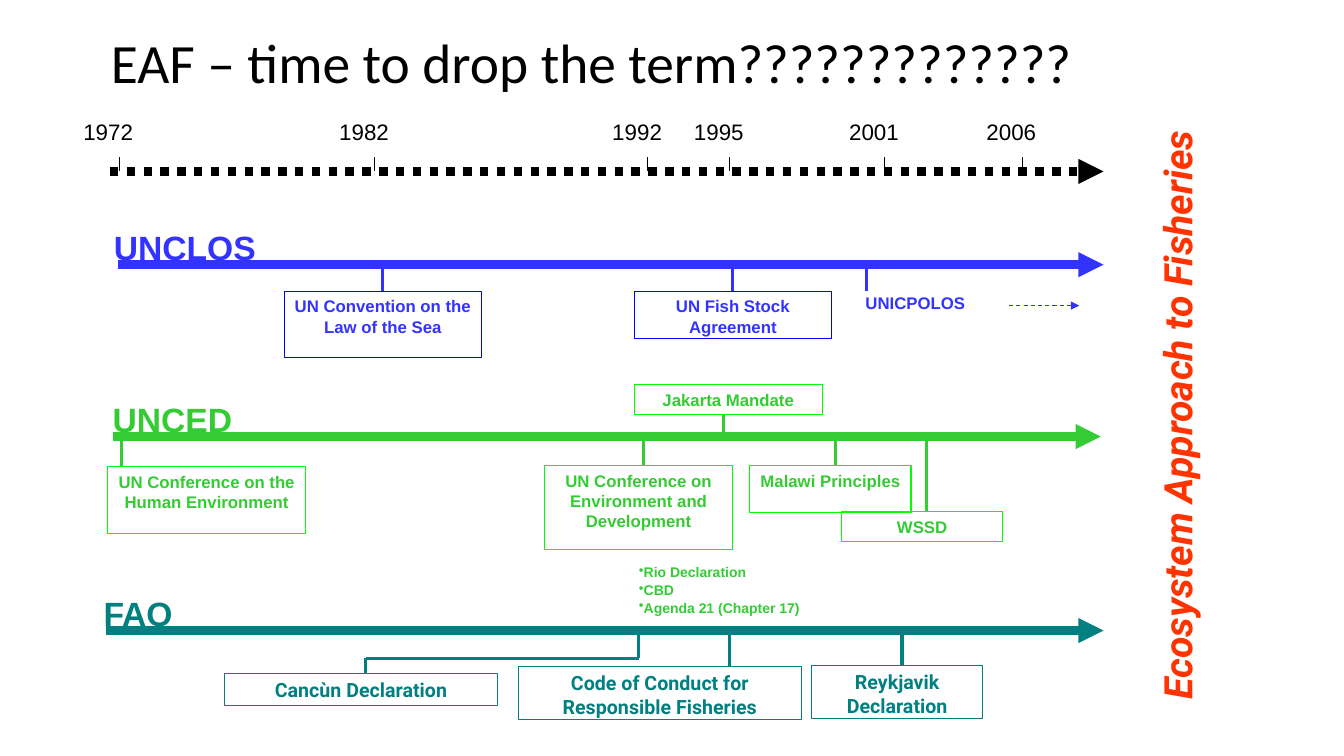
from itertools import pairwise

from lxml import etree
from pptx import Presentation
from pptx.dml.color import RGBColor
from pptx.enum import dml, shapes, text
from pptx.oxml import ns
from pptx.util import Cm, Pt

COLORS = {
    "black": "000000", "blue": "3333FF", "blue edge": "0000FF",
    "green": "33CC33", "green edge": "00FF00", "teal": "008080", "red": "FF3300",
}

# All lengths are in centimetres.
TITLE = "EAF – time to drop the term?????????????"
SIDE_LABEL = "Ecosystem Approach to Fisheries"
YEARS = [("1972", 3.0), ("1982", 9.45), ("1992", 16.33),
         ("1995", 18.39), ("2001", 22.3), ("2006", 25.76)]
YEAR_AXIS = {"left": 2.77, "right": 27.81, "y": 4.32}

# Each event: label, stem x (None for no straight stem), left, top, width, height
TRACKS = [
    {"name": "UNCLOS", "name left": 2.62, "left": 2.97, "right": 27.81, "y": 6.67,
     "color": "blue", "edge": "blue edge", "font": "Arial", "size": 12,
     "events": [
         ("UN Convention on the Law of the Sea", 9.65, 7.16, 7.34, 4.98, 1.68),
         ("UN Fish Stock Agreement", 18.47, 15.98, 7.34, 4.98, 1.19)]},
    {"name": "FAO", "name left": 2.36, "left": 2.67, "right": 27.81, "y": 15.89,
     "color": "teal", "edge": "teal", "font": "Roboto", "size": 14,
     "events": [
         ("Code of Conduct for Responsible Fisheries", 18.39, 13.06, 16.79, 7.14, 1.35),
         ("Reykjavik Declaration", 22.73, 20.45, 16.76, 4.32, 1.35),
         ("Cancùn Declaration", None, 5.66, 16.97, 6.88, 0.81)]},
    {"name": "UNCED", "name left": 2.59, "left": 2.84, "right": 27.74, "y": 11.0,
     "color": "green", "edge": "green edge", "font": "Arial", "size": 12,
     "events": [
         ("UN Conference on the Human Environment", 3.07, 2.72, 11.76, 4.98, 1.68),
         ("UN Conference on Environment and Development", 16.21, 13.72, 11.73, 4.75, 2.13),
         ("Jakarta Mandate", 18.24, 15.98, 9.7, 4.75, 0.74),
         ("Malawi Principles", 21.06, 18.9, 11.73, 4.06, 1.19),
         ("WSSD", 23.34, 21.21, 12.9, 4.06, 0.74)]},
]
CANCUN_STEM = [(16.1, 15.89), (16.1, 16.59), (9.22, 16.59), (9.22, 16.97)]
RIO_RESULTS = ["Rio Declaration", "CBD", "Agenda 21 (Chapter 17)"]

deck = Presentation()
deck.slide_width, deck.slide_height = Cm(33.87), Cm(19.05)
page = deck.slides.add_slide(deck.slide_layouts[5])


def rgb(color):
    return RGBColor.from_string(COLORS[color])


def write(box, content, size, color, font="Arial", bold=False, italic=False,
          align=text.PP_ALIGN.LEFT):
    frame = box.text_frame
    frame.word_wrap = True
    frame.text = content
    for para in frame.paragraphs:
        para.alignment = align
        for span in para.runs:
            span.font.name, span.font.size = font, Pt(size)
            span.font.bold, span.font.italic = bold, italic
            span.font.color.rgb = rgb(color)


def add_label(left, top, width, height, *args, **style):
    box = page.shapes.add_textbox(Cm(left), Cm(top), Cm(width), Cm(height))
    write(box, *args, **style)
    return box


def add_line(start, end, color, weight, dash=None, arrow=False):
    line = page.shapes.add_connector(
        shapes.MSO_CONNECTOR.STRAIGHT, *(Cm(value) for value in (*start, *end)))
    line.line.color.rgb = rgb(color)
    line.line.width = Pt(weight)
    if dash:
        line.line.dash_style = dash
    if arrow:
        etree.SubElement(line.line._get_or_add_ln(), ns.qn("a:tailEnd"), type="triangle")
    etree.SubElement(line._element.spPr, ns.qn("a:effectLst"))


def add_event(track, label, stem, left, top, width, height):
    if stem is not None:
        edge = top if top > track["y"] else top + height
        add_line((stem, track["y"]), (stem, edge), track["color"], 2.25)
    box = page.shapes.add_shape(
        shapes.MSO_SHAPE.RECTANGLE, Cm(left), Cm(top), Cm(width), Cm(height))
    box.shadow.inherit = False
    box.fill.background()
    box.line.color.rgb = rgb(track["edge"])
    box.line.width = Pt(0.75)
    frame = box.text_frame
    frame.vertical_anchor = text.MSO_ANCHOR.TOP
    frame.margin_left = frame.margin_right = Cm(0.2)
    write(box, label, track["size"], track["color"], track["font"], bold=True,
          align=text.PP_ALIGN.CENTER)


title = page.shapes.title
title.left, title.top, title.width, title.height = Cm(2.54), Cm(0.83), Cm(28.9), Cm(1.42)
title.text_frame.auto_size = text.MSO_AUTO_SIZE.NONE
title.text_frame.vertical_anchor = text.MSO_ANCHOR.MIDDLE
write(title, TITLE, 39.6, "black", "Calibri")

axis_y = YEAR_AXIS["y"]
for year, x in YEARS:
    add_label(x - 1.15, 2.84, 2.3, 0.86, year, 16, "black")
    add_line((x, axis_y - 0.36), (x, axis_y), "black", 0.75)
add_line((YEAR_AXIS["left"], axis_y), (YEAR_AXIS["right"], axis_y), "black", 6,
         dash=dml.MSO_LINE.ROUND_DOT, arrow=True)

for track in TRACKS:
    y, color = track["y"], track["color"]
    add_line((track["left"], y), (track["right"], y), color, 6, arrow=True)
    add_label(track["name left"], y - 1.08, 5.3, 1.17, track["name"], 24, color, bold=True)
    for event in track["events"]:
        add_event(track, *event)

for start, end in pairwise(CANCUN_STEM):
    add_line(start, end, "teal", 2.25)

add_line((21.84, 6.67), (21.84, 7.34), "blue", 2.25)
add_label(20.62, 7.24, 4.9, 0.71, "UNICPOLOS", 12, "blue", bold=True,
          align=text.PP_ALIGN.CENTER)
add_line((25.43, 7.7), (27.2, 7.7), "blue", 0.75, dash=dml.MSO_LINE.DASH, arrow=True)

rio = add_label(15.85, 14.08, 6.96, 1.6, "\n".join(RIO_RESULTS), 10, "green", bold=True)
for para in rio.text_frame.paragraphs:
    para.space_before = Pt(0.65)
    etree.SubElement(para._p.get_or_add_pPr(), ns.qn("a:buChar"), char="•")

side = add_label(21.77, 9.75, 15.75, 1.42, SIDE_LABEL, 28, "red", "Roboto",
                 bold=True, italic=True, align=text.PP_ALIGN.CENTER)
side.rotation = 270

deck.save("out.pptx")
